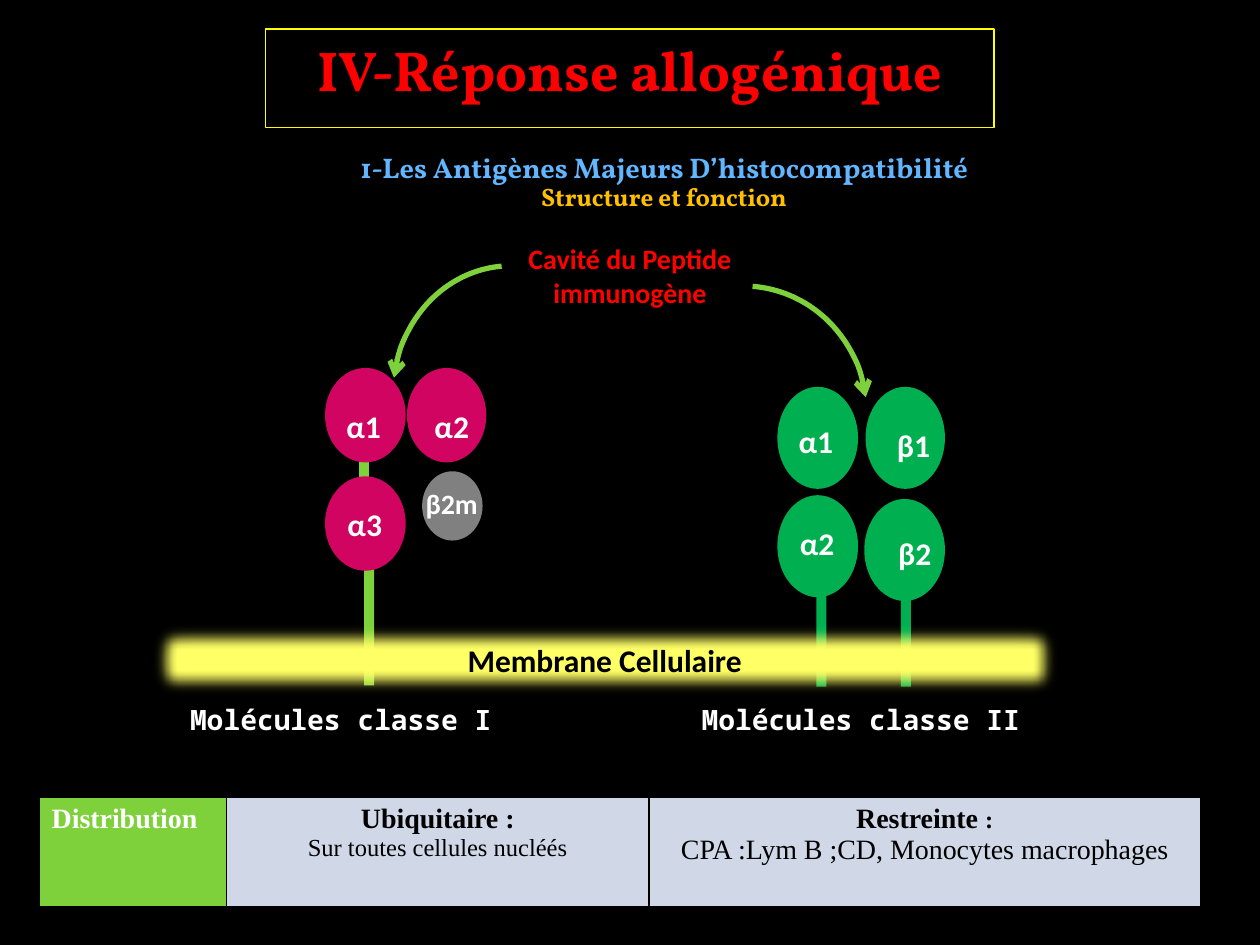
from typing import NamedTuple

from pptx import Presentation
from pptx.dml.color import RGBColor
from pptx.enum.shapes import MSO_CONNECTOR, MSO_SHAPE as SHAPE
from pptx.enum.text import MSO_ANCHOR as ANCHOR, PP_ALIGN as ALIGN
from pptx.oxml.ns import qn
from pptx.util import Inches, Pt
from lxml.etree import SubElement

BLACK, WHITE, RED = "000000", "FFFFFF", "FF0000"
LIME, GREEN, PINK, GRAY = "7FD13B", "00B050", "D10561", "808080"


class Box(NamedTuple):
    x: float
    y: float
    w: float
    h: float


class Style(NamedTuple):
    size: float
    color: str
    font: str = "Calibri"
    bold: bool = True


class Domain(NamedTuple):
    box: Box
    color: str
    label: str
    label_x: float
    label_y: float
    size: float = 18


DOMAINS = [
    Domain(Box(6.17, 3.07, 0.64, 0.81), GREEN, "α1", 6.24, 3.3),
    Domain(Box(6.87, 3.07, 0.63, 0.81), GREEN, "β1", 7.02, 3.33),
    Domain(Box(6.17, 3.93, 0.64, 0.81), GREEN, "α2", 6.25, 4.11),
    Domain(Box(6.86, 3.96, 0.64, 0.81), GREEN, "β2", 7.03, 4.19),
    Domain(Box(2.58, 2.92, 0.64, 0.75), PINK, "α1", 2.65, 3.18),
    Domain(Box(3.23, 2.92, 0.63, 0.75), PINK, "α2", 3.35, 3.18),
    Domain(Box(3.35, 3.74, 0.48, 0.55), GRAY, "β2m", 3.28, 3.81, 16),
    Domain(Box(2.58, 3.78, 0.64, 0.75), PINK, "α3", 2.66, 3.96),
]
STEMS = [
    (Box(6.48, 4.27, 0.08, 1.18), GREEN),
    (Box(7.15, 4.27, 0.08, 1.18), GREEN),
    (Box(2.89, 4.14, 0.08, 1.3), LIME),
]
ARCS = [(Box(3.12, 2.11, 1.87, 2.03), False), (Box(4.92, 2.27, 1.96, 2.03), True)]
CLASSES = [
    (Box(5.47, 5.53, 2.73, 0.37), "Molécules classe II"),
    (Box(1.41, 5.53, 2.88, 0.37), "Molécules classe I"),
]

TIMES = "Times New Roman"
HEAD = Style(16, BLACK, TIMES)
COLUMNS = [
    (1.49, LIME, ALIGN.LEFT, [[("Distribution", Style(16, WHITE, TIMES))]]),
    (3.35, "D0D8E8", ALIGN.CENTER, [
        [("Ubiquitaire :", HEAD)],
        [("Sur toutes cellules nucléés", Style(14, BLACK, TIMES, False))],
    ]),
    (4.38, "D0D8E8", ALIGN.CENTER, [
        [("Restreinte ", HEAD), (":", Style(14, BLACK, TIMES))],
        [("CPA :Lym B ;CD, Monocytes macrophages", Style(16, BLACK, TIMES, False))],
    ]),
]


def rgb(color: str) -> RGBColor:
    return RGBColor.from_string(color)


def inches(box: Box) -> list:
    return [Inches(v) for v in box]


def write(tf, lines: list, align=ALIGN.LEFT) -> None:
    for i, line in enumerate(lines):
        p = tf.add_paragraph() if i else tf.paragraphs[0]
        p.alignment = align
        for text, style in line:
            r = p.add_run()
            r.text = text
            r.font.size = Pt(style.size)
            r.font.name = style.font
            r.font.bold = style.bold
            r.font.color.rgb = rgb(style.color)


def add_text(slide, box: Box, lines: list, align=ALIGN.LEFT):
    tf = slide.shapes.add_textbox(*inches(box)).text_frame
    tf.word_wrap = True
    write(tf, lines, align)
    return tf


def add_shape(slide, kind, box: Box, fill: str = "", line: str = "", width: float = 1):
    sp = slide.shapes.add_shape(kind, *inches(box))
    sp.shadow.inherit = False
    if fill:
        sp.fill.solid()
        sp.fill.fore_color.rgb = rgb(fill)
    else:
        sp.fill.background()
    if line:
        sp.line.color.rgb = rgb(line)
        sp.line.width = Pt(width)
    else:
        sp.line.fill.background()
    return sp


def add_domain(slide, domain: Domain) -> None:
    add_shape(slide, SHAPE.OVAL, domain.box, domain.color)
    add_text(slide, Box(domain.label_x, domain.label_y, 0.64, 0.34),
             [[(domain.label, Style(domain.size, WHITE))]])


def add_link(slide, x: float, top: float, bottom: float) -> None:
    line = slide.shapes.add_connector(
        MSO_CONNECTOR.STRAIGHT, Inches(x), Inches(top), Inches(x), Inches(bottom))
    line.line.color.rgb = rgb(LIME)
    line.line.width = Pt(6)
    SubElement(line._element.spPr, qn("a:effectLst"))


def add_arc(slide, box: Box, flipped: bool) -> None:
    sp = add_shape(slide, SHAPE.ARC, box, line=LIME, width=3)
    sp.adjustments[0] = 112.65
    sp.adjustments[1] = 159.51
    if flipped:
        sp._element.spPr.find(qn("a:xfrm")).set("flipH", "1")
    SubElement(sp.line._get_or_add_ln(), qn("a:headEnd"), type="arrow")


def add_membrane(slide) -> None:
    sp = add_shape(slide, SHAPE.RECTANGLE, Box(1.17, 4.92, 7.26, 0.63), "FFFF66")
    effects = sp._element.spPr.find(qn("a:effectLst"))
    SubElement(effects, qn("a:softEdge"), rad=str(Inches(0.12)))
    sp.text_frame.vertical_anchor = ANCHOR.MIDDLE
    write(sp.text_frame, [[("Membrane Cellulaire", Style(18, BLACK))]], ALIGN.CENTER)


def add_distribution(slide) -> None:
    table = slide.shapes.add_table(
        1, len(COLUMNS), *inches(Box(0.31, 6.33, 9.22, 0.87))).table
    for i, (width, fill, align, lines) in enumerate(COLUMNS):
        table.columns[i].width = Inches(width)
        cell = table.cell(0, i)
        write(cell.text_frame, lines, align)
        tc_pr = cell._tc.get_or_add_tcPr()
        for side in ("a:lnL", "a:lnR", "a:lnT", "a:lnB"):
            ln = SubElement(tc_pr, qn(side), w=str(Pt(1)))
            SubElement(SubElement(ln, qn("a:solidFill")), qn("a:srgbClr"), val=BLACK)
        cell.fill.solid()
        cell.fill.fore_color.rgb = rgb(fill)


def main() -> None:
    prs = Presentation()
    prs.slide_width, prs.slide_height = Inches(10), Inches(7.5)
    slide = prs.slides.add_slide(prs.slide_layouts[6])
    slide.background.fill.solid()
    slide.background.fill.fore_color.rgb = rgb(BLACK)

    tf = add_text(slide, Box(2.03, 0.7, 6.48, 1.02), [
        [("1-Les Antigènes Majeurs D’histocompatibilité", Style(16.2, "61B6FF", "Vollkorn"))],
        [("Structure et fonction", Style(14.4, "FFC000", "Vollkorn"))],
    ], ALIGN.CENTER)
    tf.margin_top = Inches(0.52)
    for p in tf.paragraphs:
        p.line_spacing = 0.9

    for box, color in STEMS:
        add_shape(slide, SHAPE.RECTANGLE, box, color)
    add_link(slide, 2.89, 3.67, 3.82)
    for domain in DOMAINS:
        add_domain(slide, domain)
    add_membrane(slide)
    add_text(slide, Box(3.83, 1.87, 2.34, 0.64),
             [[("Cavité du Peptide immunogène", Style(16, RED))]], ALIGN.CENTER)
    for box, flipped in ARCS:
        add_arc(slide, box, flipped)
    for box, name in CLASSES:
        add_text(slide, box, [[(name, Style(16, WHITE, "Noto Sans Mono"))]])
    add_distribution(slide)

    sp = add_shape(slide, SHAPE.RECTANGLE, Box(2.11, 0.23, 5.78, 0.78),
                   line="FFFF00", width=0.75)
    sp.text_frame.vertical_anchor = ANCHOR.TOP
    write(sp.text_frame, [[("IV-Réponse allogénique", Style(32, RED, "Vollkorn"))]],
          ALIGN.CENTER)
    prs.save("out.pptx")


if __name__ == "__main__":
    main()
